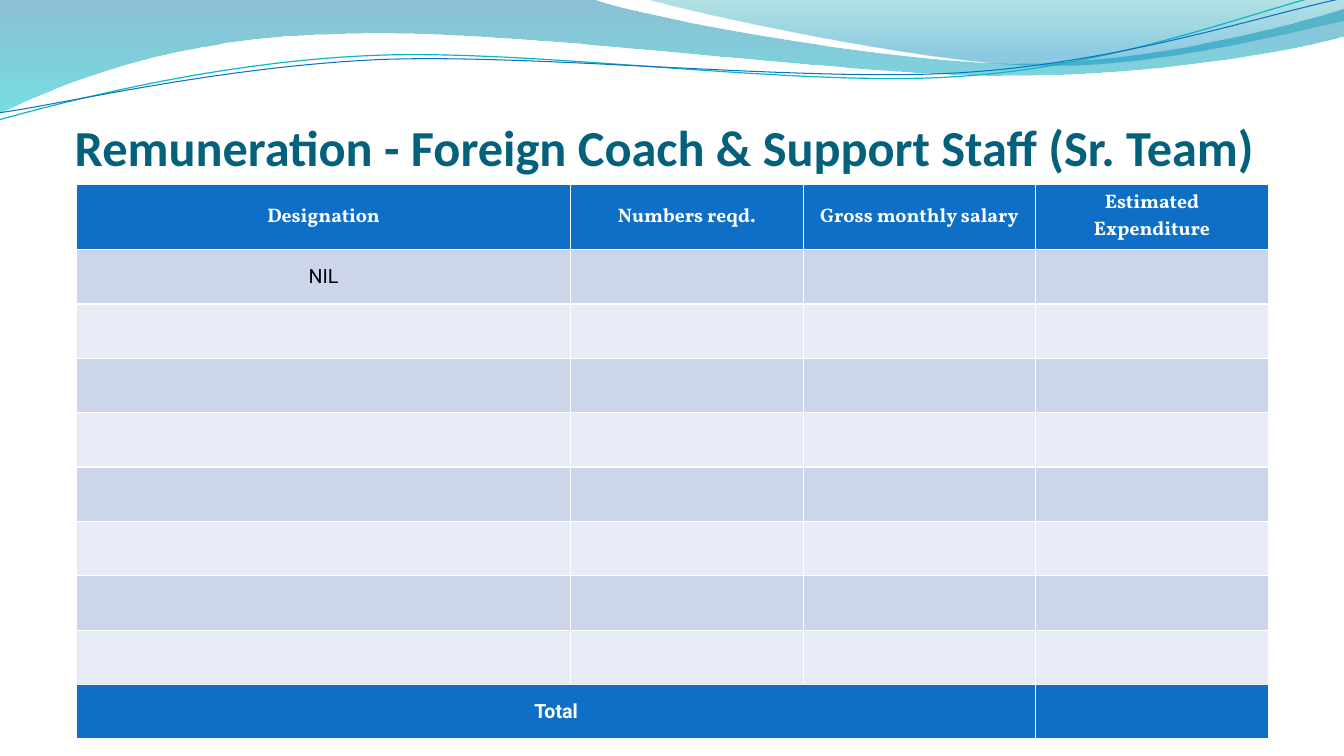
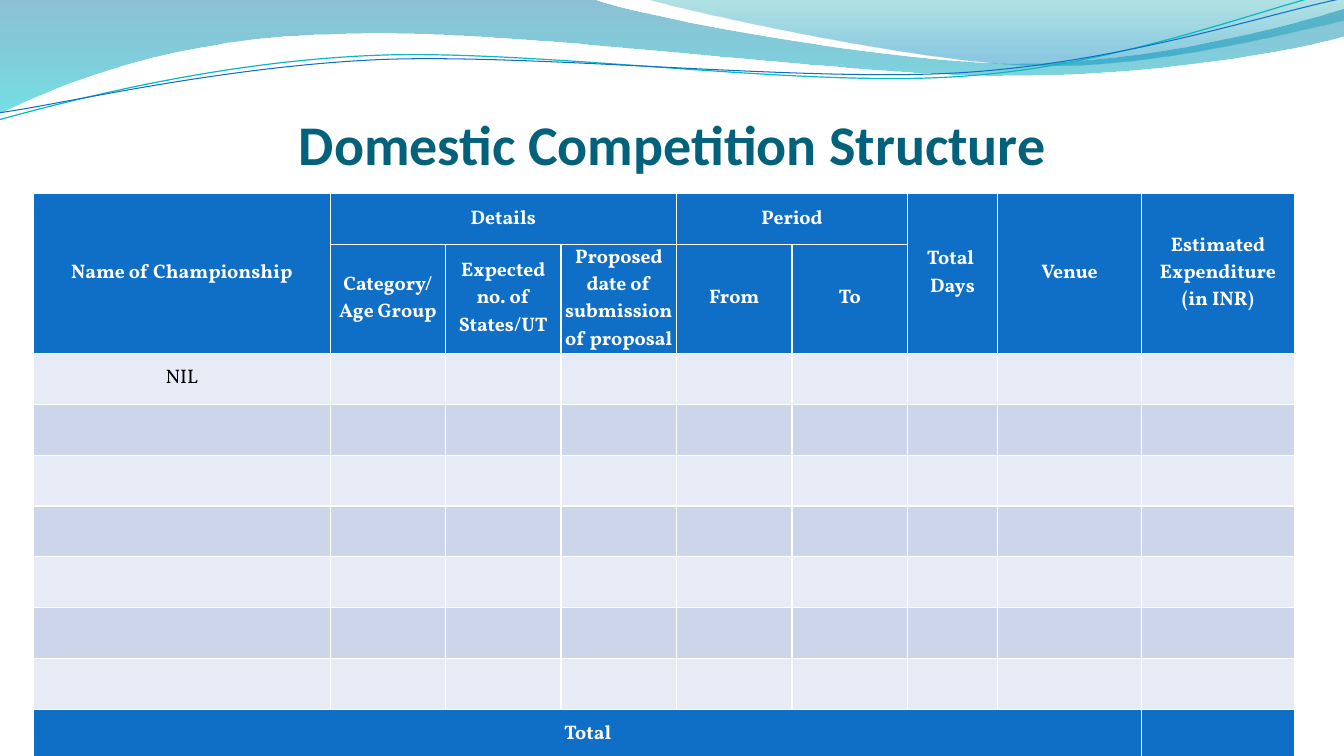
from dataclasses import dataclass

from lxml.etree import SubElement as Sub
from pptx import Presentation
from pptx.dml.color import RGBColor as Rgb
from pptx.enum.text import MSO_ANCHOR as Anchor, PP_ALIGN as Align
from pptx.oxml.ns import qn
from pptx.util import Cm, Pt


@dataclass(frozen=True)
class Theme:
    title: Rgb = Rgb.from_string("04617B")
    blue: Rgb = Rgb.from_string("0F6FC6")
    teal: Rgb = Rgb.from_string("0AB8BF")
    odd: Rgb = Rgb.from_string("CCD5EA")
    even: Rgb = Rgb.from_string("E7EBF5")
    white: Rgb = Rgb.from_string("FFFFFF")
    black: Rgb = Rgb.from_string("000000")
    sans: str = "Calibri"
    plain: str = "Roboto"
    serif: str = "Vollkorn"
    cell: Pt = Pt(14)


T = Theme()

# Segments in cm: a pair is a straight line, six numbers are a cubic curve.
# Gradient stops: position, colour, opacity in percent.
BANDS = [
    ([(0, 0), (14.91, -0.03),
      (16.1, 0.43, 22.48, 1.6, 25.68, 1.6),
      (28.91, 1.6, 32.46, 0.66, 33.86, 0.23),
      (33.91, 0.91),
      (33.3, 1.12, 29.46, 1.93, 25.25, 1.91),
      (21.06, 1.91, 12.93, 0.71, 8.71, 0.86),
      (4.37, 0.91, 1.55, 2.11, -0.03, 2.87)],
     [(0, "0074A1", 45), (1, "00C6CF", 55)]),
    ([(16.23, -0.03),
      (17.25, 0.28, 23.09, 1.57, 26.04, 1.65),
      (28.98, 1.75, 32.56, 0.81, 33.86, 0.53),
      (33.86, 0)],
     [(0, "00A1A9", 30), (0.8, "008BBF", 45)]),
]
LINES = [
    ([(-0.03, 3.02),
      (1.63, 2.57, 5.36, 1.57, 9.37, 1.4),
      (13.39, 1.22, 20.07, 2.21, 24.13, 1.93),
      (28.19, 1.68, 31.8, 0.2, 33.81, -0.25)], T.teal, 0.85),
    ([(0, 2.84),
      (1.6, 2.62, 5.54, 1.68, 9.6, 1.5),
      (13.64, 1.35, 20.22, 2.08, 24.26, 1.83),
      (28.32, 1.57, 31.88, 0.36, 33.88, -0.05)], T.blue, 0.75),
]

PAGES = [
    dict(
        title="Remuneration - Foreign Coach & Support Staff (Sr. Team)",
        size=36, box=(1.75, 30), spot=(1.93, 4.65), body=T.plain, head=1,
        cols=[12.45] + [5.86] * 3, rows=[1.64] + [1.37] * 9,
        spans=[(9, 0, 9, 2)], tight=[],
        text={(0, 0): "Designation", (0, 1): "Numbers reqd.",
              (0, 2): "Gross monthly salary", (0, 3): "Estimated Expenditure",
              (1, 0): "NIL", (9, 0): "Total"},
    ),
    dict(
        title="Domestic Competition Structure",
        size=40, box=(5.51, 22.86), spot=(0.85, 4.88), body=T.serif, head=2,
        cols=[7.47] + [2.91] * 5 + [2.27, 3.63, 3.85],
        rows=[1.28, 2.75] + [1.28] * 8,
        spans=[(0, 0, 1, 0), (0, 1, 0, 3), (0, 4, 0, 5), (0, 6, 1, 6),
               (0, 7, 1, 7), (0, 8, 1, 8), (9, 0, 9, 7)],
        tight=[(0, 6), (0, 7), (0, 8), (1, 1), (1, 2), (1, 3)],
        text={(0, 0): "Name of Championship", (0, 1): "Details",
              (0, 4): "Period", (0, 6): "Total \nDays", (0, 7): "Venue",
              (0, 8): "Estimated Expenditure\v(in INR)",
              (1, 1): "Category/ Age Group",
              (1, 2): "Expected no. of States/UT",
              (1, 3): "Proposed date of submission of proposal",
              (1, 4): "From", (1, 5): "To", (2, 0): "NIL", (9, 0): "Total"},
    ),
]


def wave(slide, segs, close):
    """Draw a freeform of straight lines and true cubic curves."""
    pts = [(Cm(seg[i]), Cm(seg[i + 1]))
           for seg in segs for i in range(0, len(seg), 2)]
    pen = slide.shapes.build_freeform(*pts[0])
    pen.add_line_segments(pts[1:], close=close)
    shape = pen.convert_to_shape()
    shape.shadow.inherit = False
    legs = iter(list(shape.element.iter(qn("a:lnTo"))))
    for seg in segs[1:]:
        leg = next(legs)
        if len(seg) == 6:
            # Fold three straight legs into one curve
            curve = leg.makeelement(qn("a:cubicBezTo"))
            leg.addprevious(curve)
            for part in (leg, next(legs), next(legs)):
                curve.append(part[0])
                part.getparent().remove(part)
    return shape


def frame(cell):
    """Give a cell thin white borders; call before setting its fill."""
    props = cell._tc.get_or_add_tcPr()
    for side in ("a:lnL", "a:lnR", "a:lnT", "a:lnB"):
        line = Sub(props, qn(side), w=str(Pt(1)))
        fill = Sub(line, qn("a:solidFill"))
        Sub(fill, qn("a:srgbClr"), val=str(T.white))


prs = Presentation()
prs.slide_width, prs.slide_height = Cm(33.87), Cm(19.05)
blank = prs.slide_layouts[6]
slides = [prs.slides.add_slide(blank) for page in PAGES]

# Shared waves: drawn once, then moved to the layout
for segs, stops in BANDS:
    band = wave(slides[0], segs, True)
    band.line.fill.background()
    band.fill.gradient()
    band.fill.gradient_angle = 270
    for stop, (pos, tint, _) in zip(band.fill.gradient_stops, stops):
        stop.position = pos
        stop.color.rgb = Rgb.from_string(tint)
    tints = band.element.spPr.iter(qn("a:srgbClr"))
    for node, (_, _, alpha) in zip(list(tints), stops):
        Sub(node, qn("a:alpha"), val=str(alpha * 1000))
for segs, tint, width in LINES:
    curve = wave(slides[0], segs, False)
    curve.fill.background()
    curve.line.color.rgb = tint
    curve.line.width = Pt(width)

tree = blank.shapes.element
for holder in list(blank.placeholders):
    tree.remove(holder.element)
for shape in list(slides[0].shapes):
    tree.append(shape.element)

for slide, page in zip(slides, PAGES):
    left, width = page["box"]
    box = slide.shapes.add_textbox(Cm(left), Cm(1.95), Cm(width), Cm(2.5))
    area = box.text_frame
    area.word_wrap = True
    area.vertical_anchor = Anchor.BOTTOM
    area.margin_left = area.margin_right = area.margin_bottom = 0
    area.text = page["title"]
    para = area.paragraphs[0]
    para.alignment = Align.CENTER
    para.font.name, para.font.size = T.sans, Pt(page["size"])
    para.font.bold, para.font.color.rgb = True, T.title

    cols, rows = page["cols"], page["rows"]
    left, top = page["spot"]
    table = slide.shapes.add_table(
        len(rows), len(cols), Cm(left), Cm(top),
        Cm(sum(cols)), Cm(sum(rows))).table
    for col, size in zip(table.columns, cols):
        col.width = Cm(size)
    for row, size in zip(table.rows, rows):
        row.height = Cm(size)
    for r0, c0, r1, c1 in page["spans"]:
        table.cell(r0, c0).merge(table.cell(r1, c1))

    for r in range(len(rows)):
        head = r < page["head"]
        strong = head or r == len(rows) - 1
        for c in range(len(cols)):
            cell = table.cell(r, c)
            frame(cell)
            cell.fill.solid()
            cell.fill.fore_color.rgb = (
                T.blue if strong else T.odd if r % 2 else T.even)
            if (r, c) not in page["text"]:
                continue
            cell.text = page["text"][r, c]
            cell.vertical_anchor = Anchor.MIDDLE
            if (r, c) in page["tight"]:
                cell.margin_left = cell.margin_right = Cm(0.03)
                cell.margin_top = cell.margin_bottom = 0
            for para in cell.text_frame.paragraphs:
                para.alignment = Align.CENTER
                font = para.font
                font.name = T.serif if head else page["body"]
                font.size, font.bold = T.cell, strong
                font.color.rgb = T.white if strong else T.black

prs.save("out.pptx")
